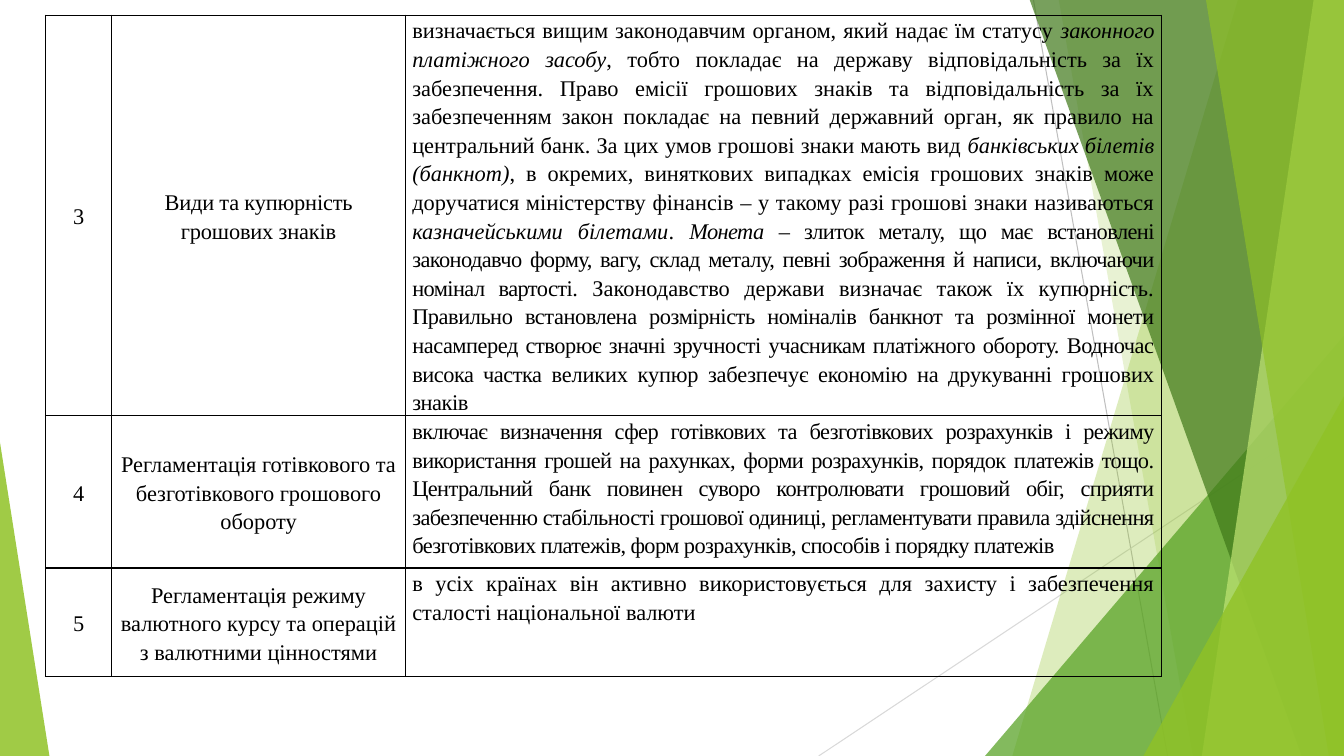
import pptx
import pptx.util
import pptx.dml.color
import pptx.enum.shapes
import pptx.enum.text
import pptx.oxml
import pptx.oxml.ns
import lxml.etree

Inches = pptx.util.Inches
Align = pptx.enum.text.PP_ALIGN
Anchor = pptx.enum.text.MSO_ANCHOR
qn = pptx.oxml.ns.qn

TOP, BOTTOM, RIGHT = -0.01, 7.5, 13.33
COLUMNS = [0.66, 2.91, 7.5]
ROWS = [3.89, 1.51, 1.08]

CURRENCY_NOTES = [
    ("визначається вищим законодавчим органом, який надає їм статусу ", False, 0),
    ("законного платіжного засобу", True, 0),
    (", тобто покладає на державу відповідальність за їх забезпечення. Право емісії "
     "грошових знаків та відповідальність за їх забезпеченням закон покладає на певний "
     "державний орган, як правило на центральний банк. За цих умов грошові знаки мають вид ",
     False, 0),
    ("банківських білетів (банкнот)", True, 0),
    (", в окремих, виняткових випадках емісія грошових знаків може доручатися міністерству "
     "фінансів – у такому разі грошові знаки називаються ", False, 0),
    ("казначейськими білетами", True, 0),
    (". ", False, 0),
    ("Монета", True, -0.4),
    (" – злиток металу, що має встановлені законодавчо форму, вагу, склад металу, певні "
     "зображення й написи, включаючи номінал вартості.", False, -0.4),
    (" Законодавство держави визначає також їх купюрність. ", False, 0),
    ("Правильно встановлена розмірність номіналів банкнот та розмінної монети насамперед "
     "створює значні зручності учасникам платіжного обороту. Водночас висока частка ",
     False, -0.3),
    ("великих купюр забезпечує економію на друкуванні грошових ", False, -0.1),
    ("знаків", False, -0.3),
]
CASH_RULES = [
    ("включає визначення сфер готівкових та безготівкових розрахунків і режиму використання "
     "грошей на рахунках, форми розрахунків, порядок платежів тощо. Центральний банк повинен "
     "суворо контролювати грошовий обіг, сприяти забезпеченню стабільності грошової одиниці, "
     "регламентувати правила здійснення безготівкових платежів, форм розрахунків, способів і "
     "порядку платежів", False, -0.4),
]
EXCHANGE_RULES = [
    ("в усіх країнах він активно використовується для захисту і забезпечення сталості "
     "національної валюти", False, 0),
]
ELEMENTS = [
    ("3", ("Види та купюрність грошових знаків", False, -0.1), CURRENCY_NOTES),
    ("4", ("Регламентація готівкового та безготівкового грошового обороту", False, 0),
     CASH_RULES),
    ("5", ("Регламентація режиму валютного курсу та операцій з валютними цінностями", False, 0),
     EXCHANGE_RULES),
]


def color(value):
    return pptx.dml.color.RGBColor.from_string(value)


def paint(shape, value, opacity):
    shape.shadow.inherit = False
    shape.line.fill.background()
    shape.fill.solid()
    shape.fill.fore_color.rgb = color(value)
    shade = shape._element.spPr.find(".//" + qn("a:srgbClr"))
    lxml.etree.SubElement(shade, qn("a:alpha")).set("val", str(opacity * 1000))


def add_ray(slide, start, end, value):
    ray = slide.shapes.add_connector(
        pptx.enum.shapes.MSO_CONNECTOR.STRAIGHT, *map(Inches, start + end))
    ray.line.color.rgb = color(value)
    ray.line.width = pptx.util.Pt(0.75)
    lxml.etree.SubElement(ray._element.spPr, qn("a:effectLst"))


def add_band(slide, top_left, bottom_left, value, opacity):
    corners = [(top_left, TOP), (RIGHT, TOP), (RIGHT, BOTTOM), (bottom_left, BOTTOM)]
    points = [(Inches(x), Inches(y)) for x, y in corners]
    builder = slide.shapes.build_freeform(*points[0])
    builder.add_line_segments(points[1:], close=True)
    paint(builder.convert_to_shape(), value, opacity)


def add_triangle(slide, left, top, width, apex, value, opacity):
    triangle = slide.shapes.add_shape(
        pptx.enum.shapes.MSO_SHAPE.ISOSCELES_TRIANGLE,
        Inches(left), Inches(top), Inches(width), Inches(BOTTOM - top))
    triangle.adjustments[0] = apex
    paint(triangle, value, opacity)


def add_backdrop(slide):
    add_ray(slide, (10.25, 0), (11.58, BOTTOM), "BFBFBF")
    add_ray(slide, (RIGHT, 4.03), (8.12, BOTTOM), "D9D9D9")
    add_band(slide, 12.28, 10.04, "90C226", 30)
    add_band(slide, 10.5, 11.83, "90C226", 20)
    add_triangle(slide, 9.77, 3.33, 3.56, 1, "54A021", 72)
    add_band(slide, 10.21, 12.91, "3F7819", 70)
    add_band(slide, 13.03, 11.92, "C0E474", 70)
    add_band(slide, 11.96, 13.18, "90C226", 65)
    add_triangle(slide, 11.34, 3.93, 1.99, 1, "90C226", 80)
    add_triangle(slide, 0, 4.39, 0.49, 0, "90C226", 85)


def add_borders(cell, value):
    properties = cell._tc.get_or_add_tcPr()
    for side in ("lnL", "lnR", "lnT", "lnB"):
        border = lxml.etree.SubElement(properties, qn("a:" + side))
        border.set("w", str(pptx.util.Pt(1)))
        fill = lxml.etree.SubElement(border, qn("a:solidFill"))
        lxml.etree.SubElement(fill, qn("a:srgbClr")).set("val", value)


def fill_cell(cell, runs, alignment, anchor):
    add_borders(cell, "000000")
    cell.fill.background()
    cell.vertical_anchor = anchor
    cell.margin_left = cell.margin_right = Inches(0.07)
    cell.margin_top = cell.margin_bottom = 0
    para = cell.text_frame.paragraphs[0]
    para.alignment = alignment
    para.line_spacing = 1.15
    for text, italic, spacing in runs:
        span = para.add_run()
        span.text = text
        span.font.name = "Times New Roman"
        span.font.size = pptx.util.Pt(16)
        span.font.italic = italic
        span.font.color.rgb = color("000000")
        span._r.get_or_add_rPr().set("spc", str(round(spacing * 100)))


def add_elements_table(slide):
    frame = slide.shapes.add_table(
        len(ROWS), len(COLUMNS), Inches(0.45), Inches(0.15),
        Inches(sum(COLUMNS)), Inches(sum(ROWS)))
    table = frame.table
    table.first_row = table.horz_banding = False
    for column, width in zip(table.columns, COLUMNS):
        column.width = Inches(width)
    for row, height, (number, name, content) in zip(table.rows, ROWS, ELEMENTS):
        row.height = Inches(height)
        fill_cell(row.cells[0], [(number, False, 0)], Align.CENTER, Anchor.MIDDLE)
        fill_cell(row.cells[1], [name], Align.CENTER, Anchor.MIDDLE)
        fill_cell(row.cells[2], content, Align.JUSTIFY, Anchor.TOP)


def main():
    deck = pptx.Presentation()
    deck.slide_width = Inches(13.33)
    deck.slide_height = Inches(7.5)
    slide = deck.slides.add_slide(deck.slide_layouts[6])
    add_backdrop(slide)
    add_elements_table(slide)
    deck.save("out.pptx")


if __name__ == "__main__":
    main()
